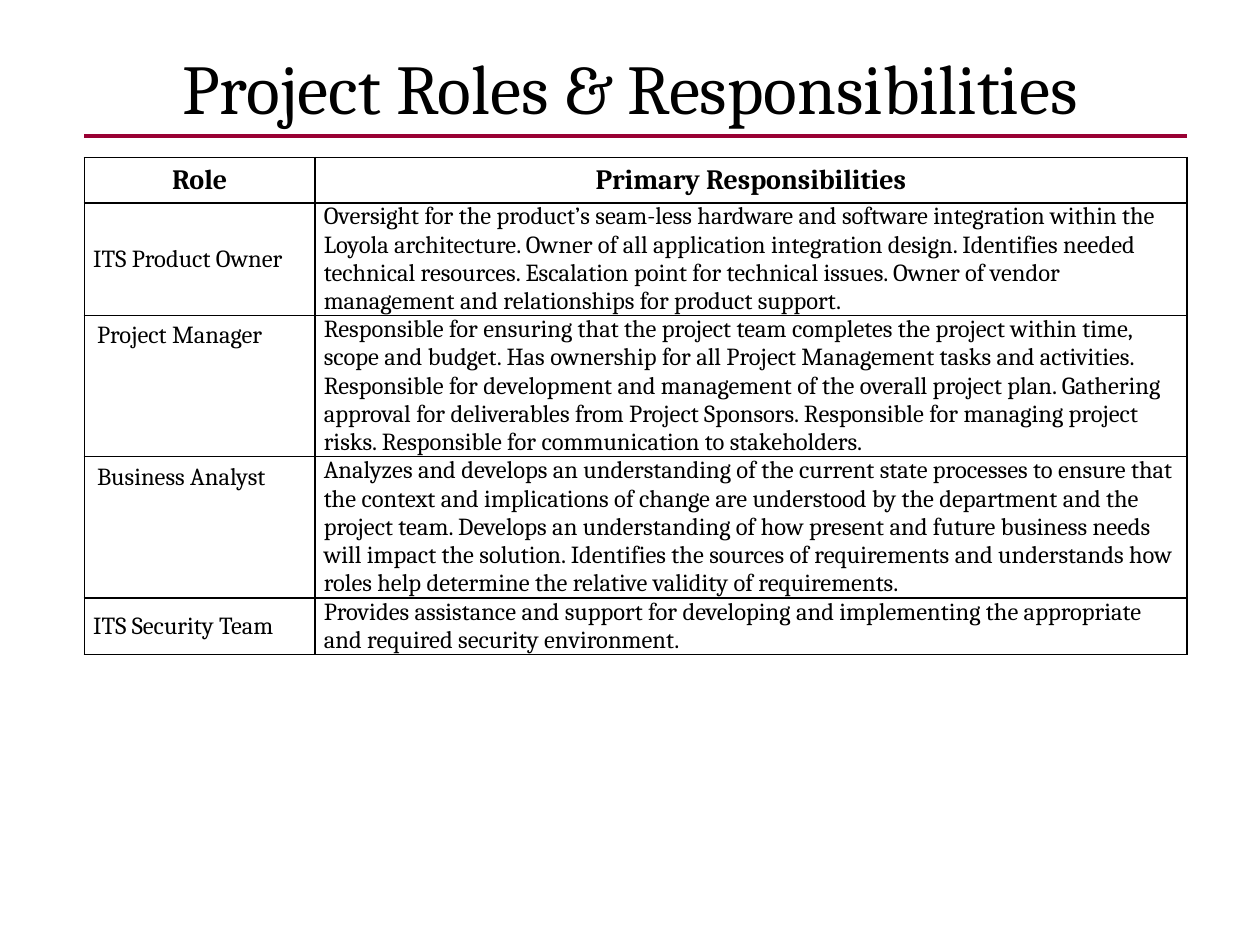
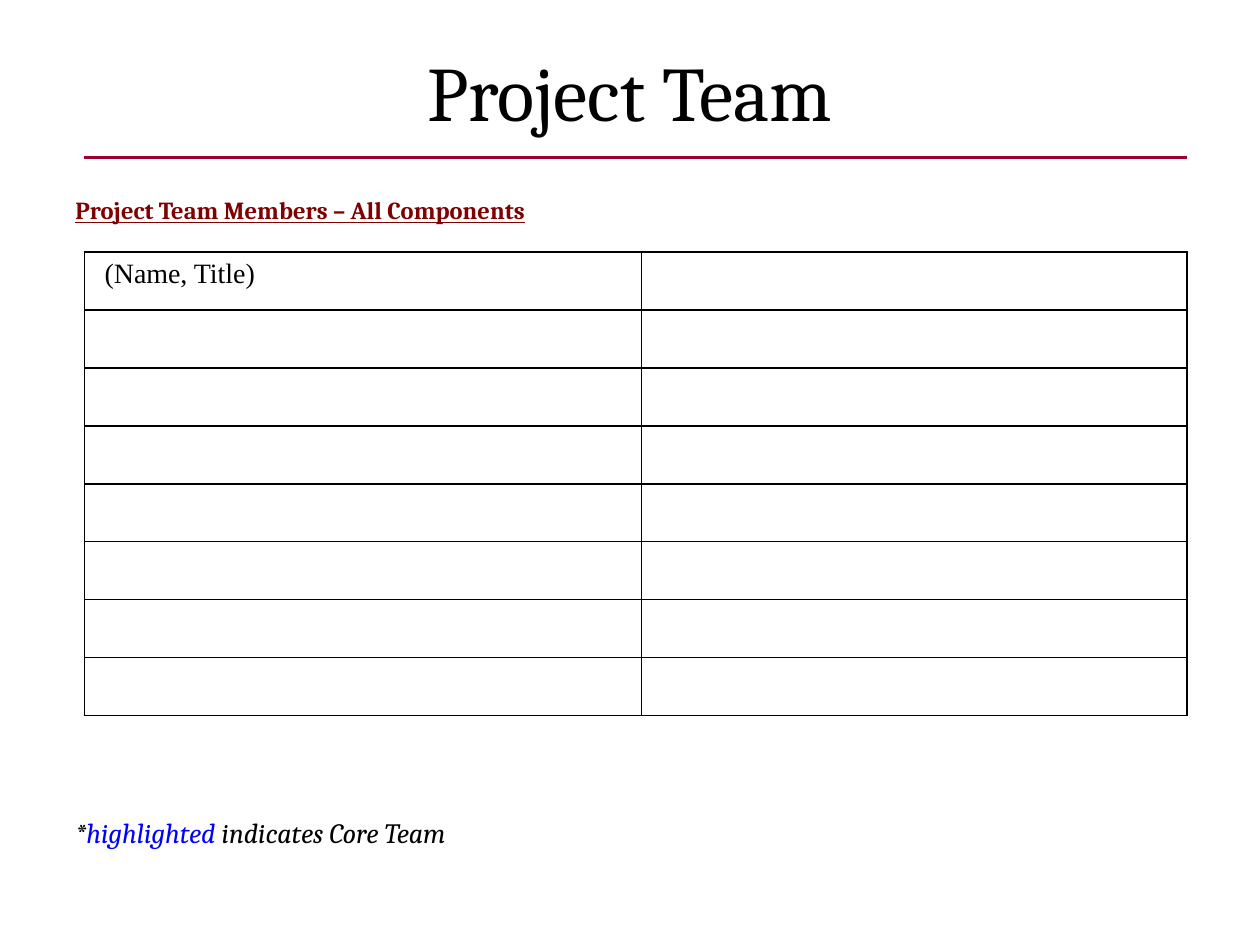
"""Build the project roles and project team slides."""
from dataclasses import dataclass

from lxml.etree import SubElement
from pptx import Presentation
from pptx.dml.color import RGBColor
from pptx.enum.shapes import MSO_CONNECTOR
from pptx.enum.text import MSO_ANCHOR, MSO_AUTO_SIZE, PP_ALIGN
from pptx.oxml.ns import qn
from pptx.util import Inches, Pt

HEADERS = ["Role", "Primary Responsibilities"]
ROLES = [
    ("ITS Product Owner",
     "Oversight for the product’s seam-less hardware and software integration within the "
     "Loyola architecture. Owner of all application integration design. Identifies needed "
     "technical resources. Escalation point for technical issues. Owner of vendor "
     "management and relationships for product support."),
    ("Project Manager",
     "Responsible for ensuring that the project team completes the project within time, "
     "scope and budget. Has ownership for all Project Management tasks and activities. "
     "Responsible for development and management of the overall project plan. Gathering "
     "approval for deliverables from Project Sponsors. Responsible for managing project "
     "risks. Responsible for communication to stakeholders."),
    ("Business Analyst",
     "Analyzes and develops an understanding of the current state processes to ensure that "
     "the context and implications of change are understood by the department and the "
     "project team. Develops an understanding of how present and future business needs "
     "will impact the solution. Identifies the sources of requirements and understands how "
     "roles help determine the relative validity of requirements."),
    ("ITS Security Team",
     "Provides assistance and support for developing and implementing the appropriate "
     "and required security environment."),
]
TOP_ALIGNED = {"Project Manager", "Business Analyst"}
ROLE_COLS, ROLE_ROWS = [1.83, 6.92], [0.36, 0.89, 1.12, 1.12, 0.45]
TEAM_HEADING = "Project Team Members – All Components"
TEAM_COLS, TEAM_ROWS = [4.42, 4.33], [0.46] * 8


@dataclass(frozen=True)
class Theme:
    """Colours, fonts, type sizes and shared measures."""
    ink: str = "000000"
    rule: str = "990033"
    heading: str = "800000"
    core: str = "0000FF"
    font: str = "Cambria"
    alt_font: str = "Times New Roman"
    head: int = 16
    body: int = 14
    left: float = 0.67
    width: float = 8.75
    margin: float = 0.5


T = Theme()
LEGEND = [("*", T.ink), ("highlighted", T.core), (" indicates Core Team", T.ink)]


def style(r, size, color=T.ink, font=T.font, bold=False, italic=False, underline=False):
    """Format one run."""
    f = r.font
    f.size, f.name, f.bold, f.italic, f.underline = Pt(size), font, bold, italic, underline
    f.color.rgb = RGBColor.from_string(color)


def add_slide(prs, title, size, rule_y):
    """Add a titled slide with its rule."""
    s = prs.slides.add_slide(prs.slide_layouts[5])
    sp = s.shapes.title
    sp.left, sp.top, sp.width, sp.height = map(Inches, (T.margin, 0.3, 9, 1.25))
    tf = sp.text_frame
    tf.text = title
    tf.vertical_anchor, tf.auto_size = MSO_ANCHOR.TOP, MSO_AUTO_SIZE.NONE
    tf.paragraphs[0].alignment = PP_ALIGN.CENTER
    style(tf.paragraphs[0].runs[0], size)
    ends = (T.left, rule_y, T.left + T.width, rule_y)
    line = s.shapes.add_connector(MSO_CONNECTOR.STRAIGHT, *map(Inches, ends))
    line.line.color.rgb, line.line.width = RGBColor.from_string(T.rule), Pt(2.25)
    SubElement(line._element.spPr, qn("a:effectLst"))
    return s


def add_grid(s, top, cols, rows):
    """Add a plain table with a thin border round every cell."""
    box = map(Inches, (T.left, top, T.width, sum(rows)))
    table = s.shapes.add_table(len(rows), len(cols), *box).table
    table.first_row = table.horz_banding = False
    for col, w in zip(table.columns, cols):
        col.width = Inches(w)
    for row, h in zip(table.rows, rows):
        row.height = Inches(h)
    for cell in table.iter_cells():
        tcPr = cell._tc.get_or_add_tcPr()
        for side in ("a:lnL", "a:lnR", "a:lnT", "a:lnB"):
            ln = SubElement(tcPr, qn(side), w=str(Pt(1)))
            SubElement(SubElement(ln, qn("a:solidFill")), qn("a:srgbClr"), val=T.ink)
        cell.fill.background()
    return table


def fill_cell(cell, text, size, **look):
    """Write and format the text of a cell."""
    cell.text = text
    p = cell.text_frame.paragraphs[0]
    style(p.runs[0], size, **look)
    return p


def add_text(s, at, wrap):
    """Add an empty text box and return its first paragraph."""
    tf = s.shapes.add_textbox(*map(Inches, at)).text_frame
    tf.word_wrap = wrap
    return tf.paragraphs[0]


def roles_slide(prs):
    """Build the roles and responsibilities table."""
    s = add_slide(prs, "Project Roles & Responsibilities", 40, 1.08)
    table = add_grid(s, 1.25, ROLE_COLS, ROLE_ROWS)
    for c, text in enumerate(HEADERS):
        fill_cell(table.cell(0, c), text, T.head, bold=True).alignment = PP_ALIGN.CENTER
    for i, entry in enumerate(ROLES, 1):
        for c, text in enumerate(entry):
            cell = table.cell(i, c)
            fill_cell(cell, text, T.body)
            if text not in TOP_ALIGNED:
                cell.vertical_anchor = MSO_ANCHOR.MIDDLE
                cell.margin_left = cell.margin_right = Inches(0.07)
                cell.margin_top = cell.margin_bottom = 0


def team_slide(prs):
    """Build the team member grid with its heading and legend."""
    s = add_slide(prs, "Project Team", 44, 1.25)
    p = add_text(s, (T.margin, 1.5, 4.42, 0.33), True)
    p.text = TEAM_HEADING
    style(p.runs[0], T.body, T.heading, bold=True, underline=True)
    first = add_grid(s, 2, TEAM_COLS, TEAM_ROWS).cell(0, 0)
    fill_cell(first, "(Name, Title)", T.head, font=T.alt_font)
    first.margin_left = Inches(0.16)
    p = add_text(s, (T.margin, 6.42, 3.24, 0.37), False)
    for text, color in LEGEND:
        r = p.add_run()
        r.text = text
        style(r, T.head, color, italic=True)


def main():
    """Build and save the presentation."""
    prs = Presentation()
    prs.slide_width, prs.slide_height = Inches(10), Inches(7.5)
    roles_slide(prs)
    team_slide(prs)
    prs.save("out.pptx")


if __name__ == "__main__":
    main()
